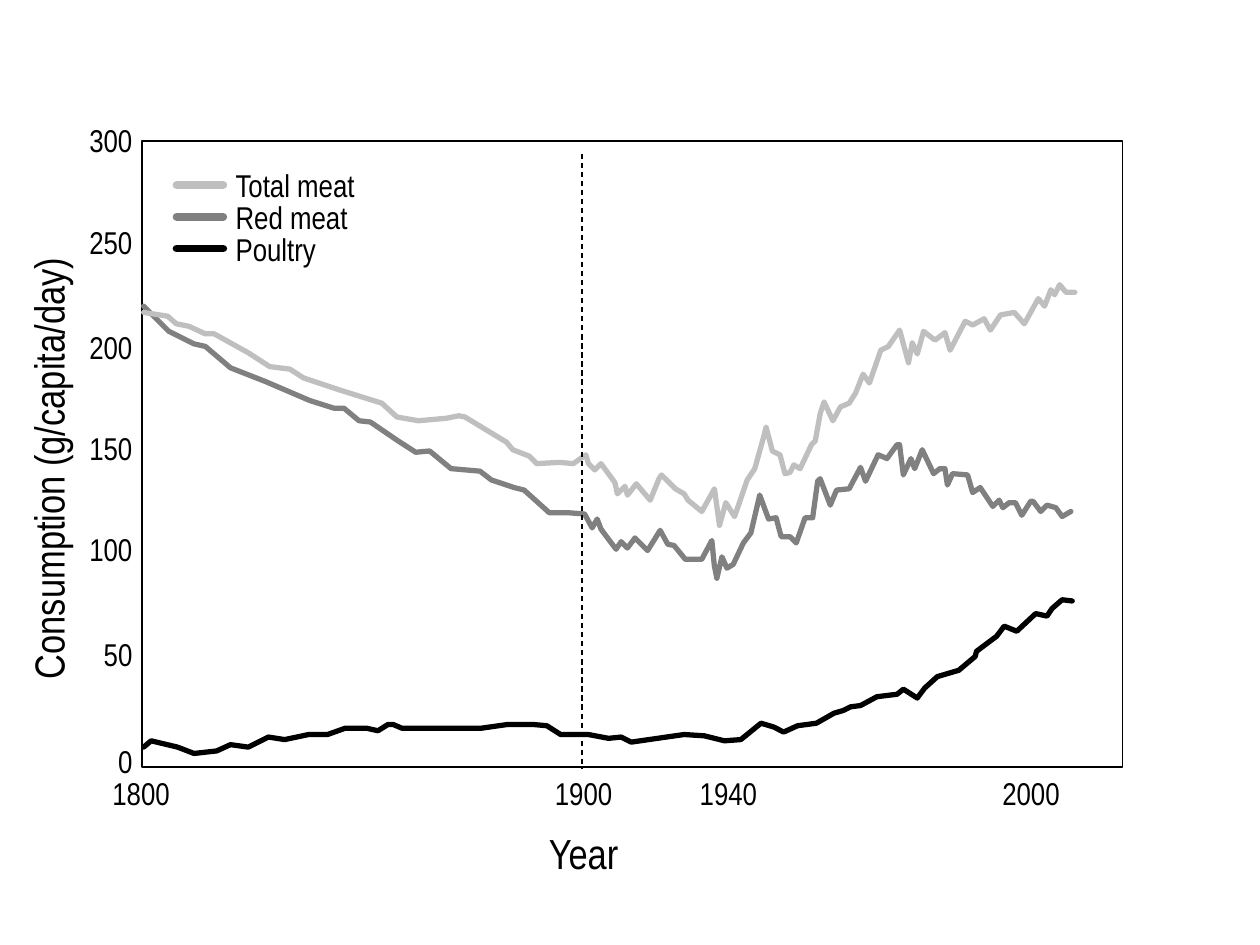
from lxml import etree
from pptx import Presentation
from pptx.dml.color import RGBColor
from pptx.enum.dml import MSO_LINE
from pptx.enum.shapes import MSO_CONNECTOR, MSO_SHAPE
from pptx.enum.text import MSO_AUTO_SIZE, PP_ALIGN
from pptx.oxml.ns import qn
from pptx.util import Cm, Pt

BLACK = RGBColor(0x00, 0x00, 0x00)
GREY = RGBColor(0x80, 0x80, 0x80)
SILVER = RGBColor(0xBF, 0xBF, 0xBF)
STRAIGHT = MSO_CONNECTOR.STRAIGHT
RECTANGLE = MSO_SHAPE.RECTANGLE
DASH = MSO_LINE.DASH
GROW = MSO_AUTO_SIZE.SHAPE_TO_FIT_TEXT
LEFT, CENTER, RIGHT = PP_ALIGN.LEFT, PP_ALIGN.CENTER, PP_ALIGN.RIGHT

CURVE_UNIT = Cm(0.0254)
POULTRY = [
    (114, 593), (120, 588), (141, 593), (154, 598), (172, 596), (183, 591),
    (197, 593), (213, 585), (226, 587), (245, 583), (260, 583), (274, 578),
    (291, 578), (300, 580), (308, 575), (312, 575), (319, 578), (382, 578),
    (403, 575), (423, 575), (434, 576), (445, 583), (467, 583), (483, 586),
    (493, 585), (501, 589), (543, 583), (559, 584), (575, 588), (588, 587),
    (604, 574), (614, 577), (622, 581), (633, 576), (648, 574), (662, 566),
    (669, 564), (675, 561), (683, 560), (696, 553), (712, 551), (717, 547),
    (728, 554), (734, 546), (744, 537), (761, 532), (774, 521), (775, 517),
    (791, 505), (797, 497), (807, 501), (822, 487), (831, 489), (835, 483),
    (843, 476), (851, 477),
]
RED_MEAT = [
    (114, 243), (134, 263), (154, 273), (163, 275), (183, 292), (211, 303),
    (246, 318), (265, 324), (273, 324), (285, 334), (294, 335), (316, 350),
    (330, 359), (341, 358), (358, 372), (381, 374), (390, 381), (408, 387),
    (416, 389), (436, 407), (451, 407), (464, 408), (470, 419), (474, 412),
    (477, 420), (489, 436), (493, 430), (498, 435), (504, 427), (514, 437),
    (524, 421), (530, 432), (535, 433), (544, 444), (557, 444), (565, 429),
    (567, 449), (569, 459), (573, 442), (577, 451), (582, 448), (590, 431),
    (596, 423), (603, 393), (610, 412), (616, 411), (620, 426), (627, 426),
    (632, 431), (639, 411), (645, 411), (649, 382), (651, 380), (659, 401),
    (664, 389), (674, 388), (683, 371), (687, 382), (697, 361), (704, 364),
    (712, 353), (714, 353), (717, 377), (723, 364), (726, 372), (732, 357),
    (741, 376), (746, 372), (750, 372), (752, 385), (756, 376), (768, 377),
    (772, 391), (778, 387), (788, 402), (793, 397), (796, 403), (801, 399),
    (806, 399), (811, 409), (818, 398), (820, 398), (826, 406), (831, 401),
    (838, 403), (843, 410), (850, 406),
]
TOTAL_MEAT = [
    (114, 248), (133, 251), (140, 257), (150, 259), (163, 265), (170, 265),
    (197, 280), (214, 291), (230, 293), (241, 300), (271, 310), (303, 320),
    (315, 331), (332, 334), (354, 332), (364, 330), (369, 331), (402, 351),
    (407, 357), (420, 362), (426, 368), (444, 367), (455, 368), (465, 361),
    (467, 368), (472, 373), (477, 368), (488, 383), (490, 392), (496, 386),
    (498, 393), (505, 384), (516, 397), (523, 380), (525, 377), (536, 388),
    (543, 392), (546, 397), (557, 406), (567, 388), (571, 417), (576, 399),
    (583, 410), (593, 381), (599, 372), (606, 347), (608, 339), (613, 358),
    (619, 361), (623, 376), (627, 375), (630, 369), (635, 372), (644, 353),
    (647, 350), (651, 328), (654, 319), (661, 334), (667, 323), (674, 320),
    (679, 312), (685, 297), (690, 304), (699, 278), (705, 275), (714, 262),
    (721, 288), (724, 272), (728, 281), (733, 263), (742, 270), (750, 264),
    (754, 278), (766, 255), (772, 258), (781, 253), (786, 262), (794, 250),
    (805, 248), (813, 257), (824, 237), (829, 243), (834, 230), (837, 234),
    (841, 226), (846, 232), (853, 232),
]
CURVES = [(POULTRY, BLACK), (RED_MEAT, GREY), (TOTAL_MEAT, SILVER)]
YEARS = [("1800", 2.84), ("1900", 11.76), ("1940", 14.68), ("2000", 20.78)]
AMOUNTS = [("0", 14.83, 0.84), ("50", 12.67, 1.12), ("100", 10.57, 1.42),
           ("150", 8.53, 1.42), ("200", 6.48, 1.42), ("250", 4.37, 1.42),
           ("300", 2.31, 1.42)]
LEGEND = [("Total meat", SILVER, 2.95), ("Red meat", GREY, 2.79),
          ("Poultry", BLACK, 2.16)]


class ChartSlide:
    font = "Arial Narrow"
    label_size = 18
    title_size = 24

    def __init__(self, deck):
        self.slide = deck.slides.add_slide(deck.slide_layouts[6])
        self.shapes = self.slide.shapes

    def stroke(self, shape, color, width):
        shape.line.color.rgb = color
        shape.line.width = Pt(width)

    def round_ends(self, shape):
        outline = shape.element.spPr.find(qn("a:ln"))
        outline.set("cap", "rnd")
        etree.SubElement(outline, qn("a:round"))

    def frame(self, left, top, width, height):
        shape = self.shapes.add_shape(
            RECTANGLE, Cm(left), Cm(top), Cm(width), Cm(height))
        shape.shadow.inherit = False
        shape.fill.background()
        self.stroke(shape, BLACK, 1)

    def curve(self, points, color):
        builder = self.shapes.build_freeform(*points[0], scale=CURVE_UNIT)
        builder.add_line_segments(points[1:], close=False)
        shape = builder.convert_to_shape()
        shape.shadow.inherit = False
        shape.fill.background()
        self.stroke(shape, color, 3)
        self.round_ends(shape)

    def line(self, start, end, color, width):
        connector = self.shapes.add_connector(
            STRAIGHT, *(Cm(length) for length in start + end))
        self.stroke(connector, color, width)
        etree.SubElement(connector.element.spPr, qn("a:effectLst"))
        return connector

    def text(self, words, left, top, width, height, align, size, turn=0):
        box = self.shapes.add_textbox(
            Cm(left), Cm(top), Cm(width), Cm(height))
        box.rotation = turn
        box.text_frame.word_wrap = False
        box.text_frame.auto_size = GROW
        para = box.text_frame.paragraphs[0]
        para.alignment = align
        span = para.add_run()
        span.text = words
        span.font.name = self.font
        span.font.size = Pt(size)
        span.font.color.rgb = BLACK

    def label(self, words, left, top, width, height, align):
        self.text(words, left, top, width, height, align, self.label_size)

    def title(self, words, left, top, width, turn=0):
        self.text(words, left, top, width, 1.27, CENTER, self.title_size, turn)


def main():
    deck = Presentation()
    deck.slide_width, deck.slide_height = Cm(25.4), Cm(19.05)
    page = ChartSlide(deck)
    page.frame(2.87, 2.84, 19.76, 12.62)
    for points, color in CURVES:
        page.curve(points, color)
    guide = page.line((11.73, 3.1), (11.73, 15.49), BLACK, 0.75)
    guide.line.dash_style = DASH

    page.title("Year", 10.8, 16.56, 1.93)
    for year, middle in YEARS:
        page.label(year, middle - 0.86, 15.47, 1.73, 1.3, CENTER)
    for amount, top, width in AMOUNTS:
        page.label(amount, 2.92 - width, top, width, 1.3, RIGHT)
    page.title("Consumption (g/capita/day)", -3.58, 8.81, 9.09, 270)

    for row, (name, color, width) in enumerate(LEGEND):
        middle = 3.73 + 0.64 * row
        key = page.line((3.56, middle), (4.5, middle), color, 4.5)
        page.round_ends(key)
        page.label(name, 4.5, middle - 0.5, width, 1.02, LEFT)
    deck.save("out.pptx")


if __name__ == "__main__":
    main()
